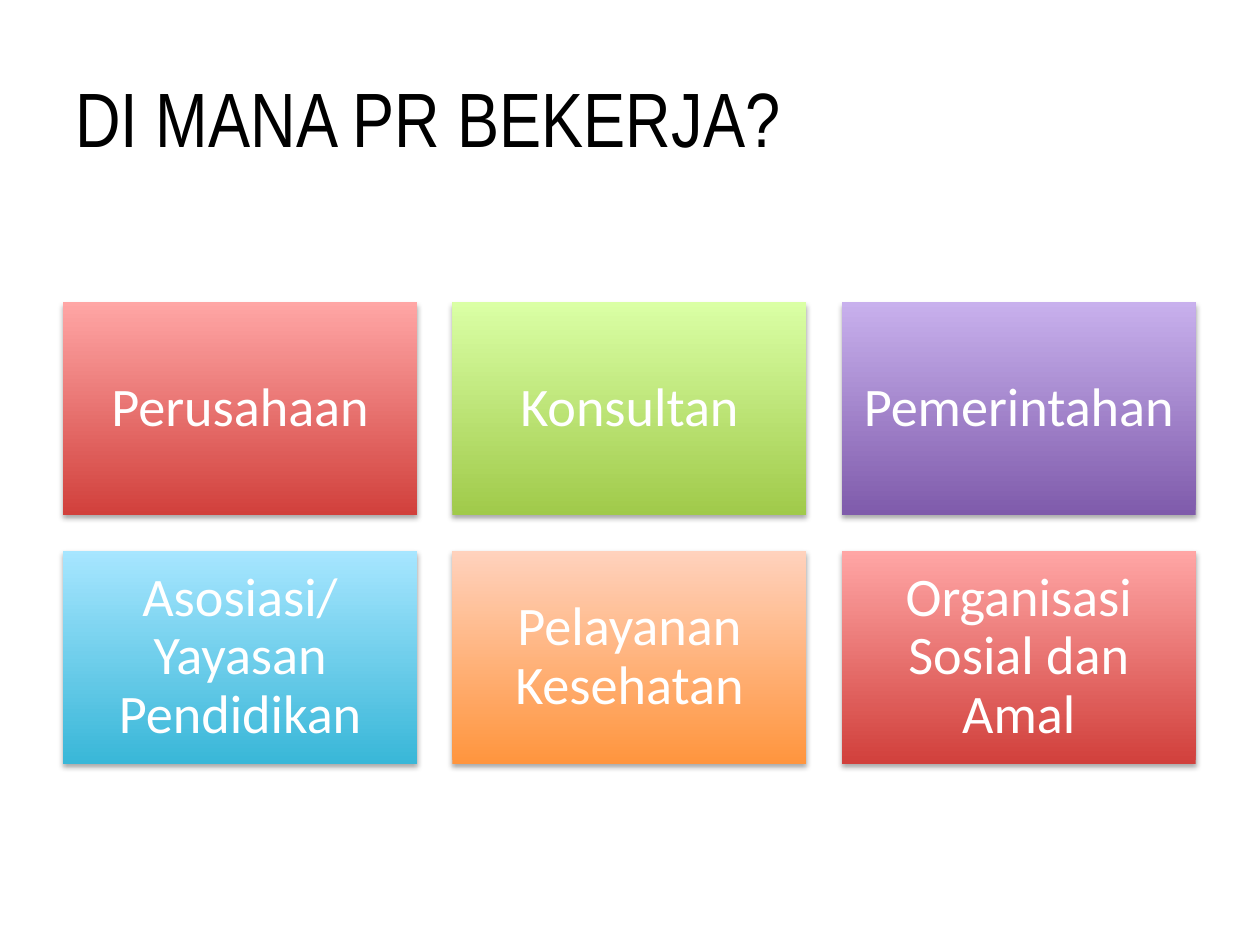
from lxml import etree
from pptx import Presentation
from pptx.dml.color import RGBColor
from pptx.enum.shapes import MSO_SHAPE
from pptx.enum.text import MSO_ANCHOR, PP_ALIGN
from pptx.oxml.ns import qn
from pptx.util import Inches, Pt

RECTANGLE = MSO_SHAPE.RECTANGLE
MIDDLE = MSO_ANCHOR.MIDDLE
LEFT, CENTER = PP_ALIGN.LEFT, PP_ALIGN.CENTER

RED = ("D1403C", "FFA6A5")
GREEN = ("A0CA4A", "DAFFA5")
PURPLE = ("7F5BAB", "C8B0ED")
BLUE = ("39B7D8", "A7E6FF")
ORANGE = ("FF953E", "FFD2BD")

WORKPLACES = [
    ("Perusahaan", RED),
    ("Konsultan", GREEN),
    ("Pemerintahan", PURPLE),
    ("Asosiasi/ Yayasan Pendidikan", BLUE),
    ("Pelayanan Kesehatan", ORANGE),
    ("Organisasi Sosial dan Amal", RED),
]
COLUMNS = 3
GRID_LEFT, GRID_TOP = 0.5, 2.4
CARD_WIDTH, CARD_HEIGHT = 2.81, 1.69
GAP = 0.28


def color(hex_value):
    return RGBColor.from_string(hex_value)


def write_text(shape, text, size, font, hex_color, align=LEFT, line_spacing=1.0,
               side_inset=0.1, end_inset=0.05):
    frame = shape.text_frame
    frame.word_wrap = True
    frame.vertical_anchor = MIDDLE
    frame.margin_left = frame.margin_right = Inches(side_inset)
    frame.margin_top = frame.margin_bottom = Inches(end_inset)
    paragraph = frame.paragraphs[0]
    paragraph.alignment = align
    paragraph.line_spacing = line_spacing
    run = paragraph.add_run()
    run.text = text
    run.font.size = Pt(size)
    run.font.name = font
    run.font.color.rgb = color(hex_color)


def fill_gradient(shape, bottom, top):
    shape.fill.gradient()
    shape.fill.gradient_angle = 90
    for stop, hex_color in zip(shape.fill.gradient_stops, (bottom, top)):
        stop.color.rgb = color(hex_color)


def add_soft_shadow(shape):
    """Cast a faint black shadow straight down."""
    shape.shadow.inherit = False
    effects = shape._element.spPr.find(qn("a:effectLst"))
    shadow = etree.SubElement(effects, qn("a:outerShdw"), blurRad=str(Pt(3.1)),
                              dist=str(Pt(1.8)), dir="5400000", rotWithShape="0")
    black = etree.SubElement(shadow, qn("a:srgbClr"), val="000000")
    etree.SubElement(black, qn("a:alpha"), val="35000")


def add_title(slide, text):
    title = slide.shapes.add_textbox(Inches(0.5), Inches(0.3), Inches(9), Inches(1.25))
    write_text(title, text, size=44, font="Arial Narrow", hex_color="000000")


def add_card(slide, left, top, text, gradient):
    card = slide.shapes.add_shape(RECTANGLE, Inches(left), Inches(top),
                                  Inches(CARD_WIDTH), Inches(CARD_HEIGHT))
    fill_gradient(card, *gradient)
    card.line.fill.background()
    add_soft_shadow(card)
    write_text(card, text, size=31, font="Calibri", hex_color="FFFFFF", align=CENTER,
               line_spacing=0.9, side_inset=0.13, end_inset=0.13)


def main():
    presentation = Presentation()
    presentation.slide_width = Inches(10)
    presentation.slide_height = Inches(7.5)
    slide = presentation.slides.add_slide(presentation.slide_layouts[6])

    add_title(slide, "DI MANA PR BEKERJA?")
    for index, (text, gradient) in enumerate(WORKPLACES):
        row, column = divmod(index, COLUMNS)
        add_card(slide, GRID_LEFT + column * (CARD_WIDTH + GAP),
                 GRID_TOP + row * (CARD_HEIGHT + GAP), text, gradient)

    presentation.save("out.pptx")


if __name__ == "__main__":
    main()
